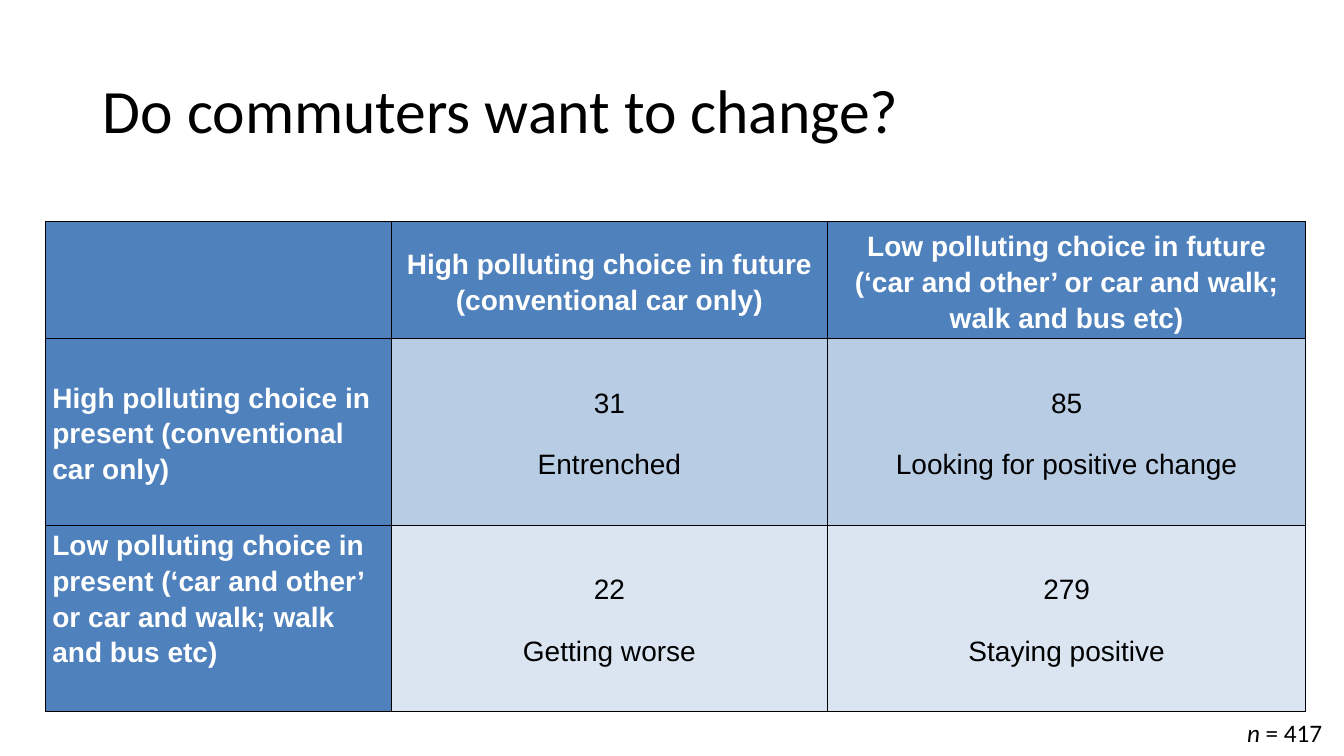
from dataclasses import dataclass

from lxml import etree
from pptx import Presentation
from pptx.dml.color import RGBColor
from pptx.enum.text import MSO_ANCHOR, PP_ALIGN
from pptx.oxml.ns import qn
from pptx.util import Inches, Pt

LEFT, CENTER = PP_ALIGN.LEFT, PP_ALIGN.CENTER
TOP, MIDDLE = MSO_ANCHOR.TOP, MSO_ANCHOR.MIDDLE

BLACK = RGBColor(0x00, 0x00, 0x00)
WHITE = RGBColor(0xFF, 0xFF, 0xFF)
HEADER_BLUE = RGBColor(0x4F, 0x81, 0xBD)
MID_BLUE = RGBColor(0xB8, 0xCC, 0xE4)
PALE_BLUE = RGBColor(0xDB, 0xE5, 0xF1)

COLUMN_WIDTHS = (3.43, 4.33, 4.74)
ROW_HEIGHTS = (1.16, 1.85, 1.85)


@dataclass(frozen=True)
class CellStyle:
    fill: RGBColor
    color: RGBColor = BLACK
    bold: bool = False
    align: PP_ALIGN = CENTER
    anchor: MSO_ANCHOR = MIDDLE


@dataclass(frozen=True)
class TableCell:
    text: str
    style: CellStyle


COLUMN_HEADER = CellStyle(HEADER_BLUE, WHITE, True)
ROW_HEADER = CellStyle(HEADER_BLUE, WHITE, True, LEFT)
TOP_ROW_HEADER = CellStyle(HEADER_BLUE, WHITE, True, LEFT, TOP)
HIGH_PRESENT = CellStyle(MID_BLUE)
LOW_PRESENT = CellStyle(PALE_BLUE)

ROWS = (
    (
        TableCell("", COLUMN_HEADER),
        TableCell("High polluting choice in future (conventional car only)", COLUMN_HEADER),
        TableCell("Low polluting choice in future (‘car and other’ or car and walk; "
                  "walk and bus etc)", COLUMN_HEADER),
    ),
    (
        TableCell("High polluting choice in present (conventional car only)", ROW_HEADER),
        TableCell("31\nEntrenched", HIGH_PRESENT),
        TableCell("85\nLooking for positive change", HIGH_PRESENT),
    ),
    (
        TableCell("Low polluting choice in present (‘car and other’ or car and walk; "
                  "walk and bus etc)", TOP_ROW_HEADER),
        TableCell("22\nGetting worse", LOW_PRESENT),
        TableCell("279\nStaying positive", LOW_PRESENT),
    ),
)


def format_font(font, name: str, size: float, color: RGBColor) -> None:
    """Set typeface, size and colour."""
    font.name = name
    font.size = Pt(size)
    font.color.rgb = color


def add_borders(cell) -> None:
    """Draw a thin black line on all four sides of a cell."""
    properties = cell._tc.get_or_add_tcPr()
    for index, side in enumerate(("a:lnL", "a:lnR", "a:lnT", "a:lnB")):
        line = etree.Element(qn(side), w=str(Pt(1)))
        fill = etree.SubElement(line, qn("a:solidFill"))
        etree.SubElement(fill, qn("a:srgbClr"), val=str(BLACK))
        properties.insert(index, line)


def fill_cell(cell, content: TableCell) -> None:
    """Write and style one table cell."""
    style = content.style
    cell.fill.solid()
    cell.fill.fore_color.rgb = style.fill
    cell.vertical_anchor = style.anchor
    cell.margin_left = cell.margin_right = Inches(0.07)
    cell.margin_top = cell.margin_bottom = 0
    add_borders(cell)
    cell.text_frame.text = content.text
    paras = cell.text_frame.paragraphs
    for para in paras:
        para.alignment = style.align
        para.line_spacing = 1.15
        is_count = len(paras) > 1 and para.text.isdigit()
        para.space_before = para.space_after = Pt(12 if is_count else 6)
        for span in para.runs:
            format_font(span.font, "Arial", 20, style.color)
            span.font.bold = style.bold


def add_title(slide) -> None:
    """Place and format the slide title."""
    title = slide.shapes.title
    title.left, title.top = Inches(0.92), Inches(0.4)
    title.width, title.height = Inches(11.5), Inches(1.45)
    title.text_frame.text = "Do commuters want to change?"
    title.text_frame.vertical_anchor = MIDDLE
    para = title.text_frame.paragraphs[0]
    para.alignment = LEFT
    para.line_spacing = 0.9
    format_font(para.runs[0].font, "Calibri", 44, BLACK)


def add_choice_table(slide) -> None:
    """Add the table of present against future choices."""
    table = slide.shapes.add_table(
        len(ROW_HEIGHTS), len(COLUMN_WIDTHS), Inches(0.45), Inches(2.2),
        Inches(sum(COLUMN_WIDTHS)), Inches(sum(ROW_HEIGHTS))).table
    for column, width in zip(table.columns, COLUMN_WIDTHS):
        column.width = Inches(width)
    for row, height, contents in zip(table.rows, ROW_HEIGHTS, ROWS):
        row.height = Inches(height)
        for cell, content in zip(row.cells, contents):
            fill_cell(cell, content)


def add_sample_size(slide) -> None:
    """Add the sample size below the table."""
    box = slide.shapes.add_textbox(Inches(12.27), Inches(7.07), Inches(1.06), Inches(0.43))
    box.text_frame.word_wrap = True
    para = box.text_frame.paragraphs[0]
    for text, italic in (("n", True), (" = 417", False)):
        span = para.add_run()
        span.text = text
        format_font(span.font, "Calibri", 18, BLACK)
        span.font.italic = italic


def main() -> None:
    """Build and save the deck."""
    deck = Presentation()
    deck.slide_width, deck.slide_height = Inches(13.33), Inches(7.5)
    slide = deck.slides.add_slide(deck.slide_layouts.get_by_name("Title Only"))
    add_title(slide)
    add_choice_table(slide)
    add_sample_size(slide)
    deck.save("out.pptx")


if __name__ == "__main__":
    main()
